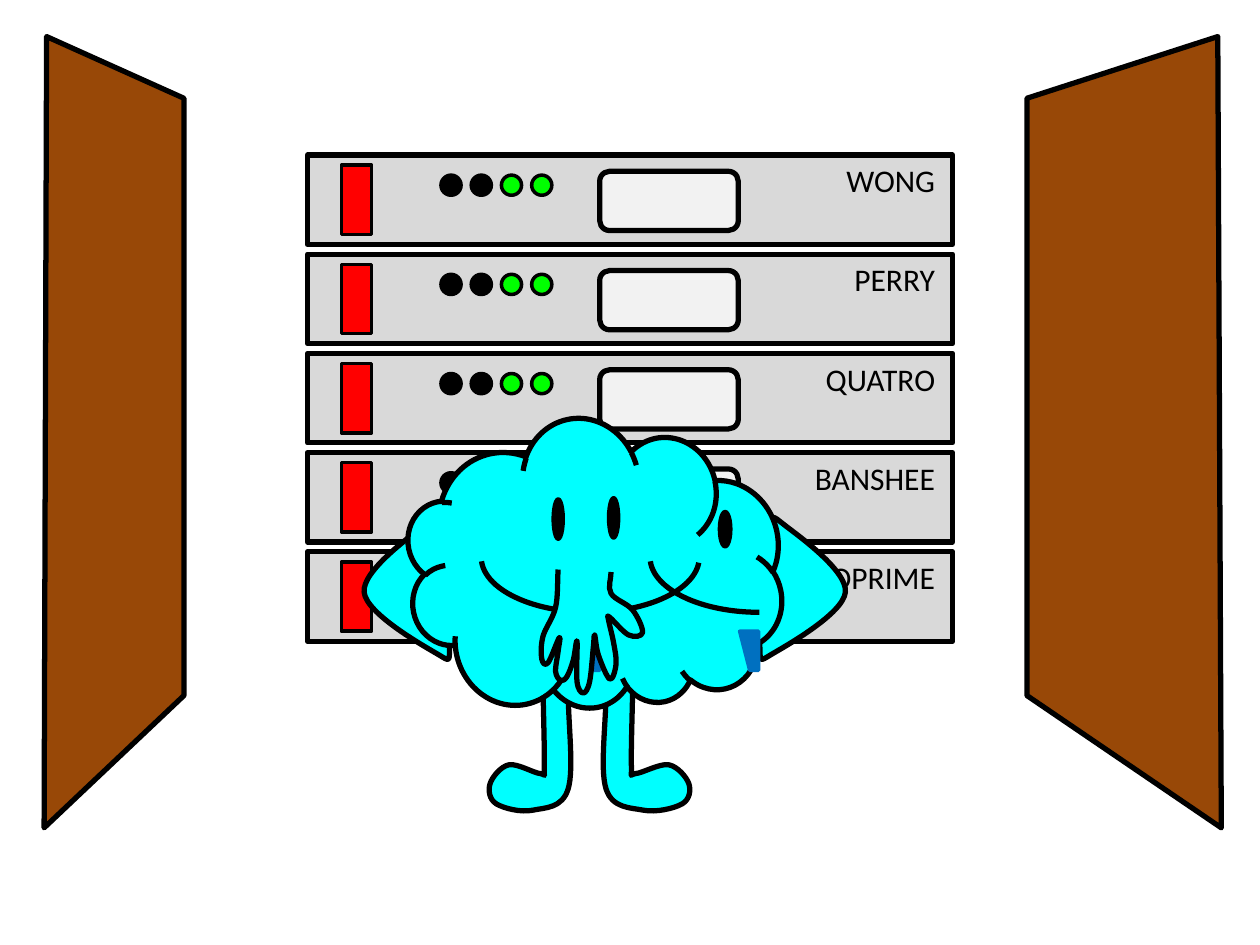
import pptx
import pptx.util
import pptx.dml.color
import pptx.enum.shapes
import pptx.enum.text
import pptx.oxml.ns

HUES = {
    "ink": "000000", "case": "D9D9D9", "red": "FF0000", "green": "00FF00",
    "pane": "F2F2F2", "wood": "984807", "cloud": "00FFFF", "blue": "0070C0",
}
RACKS = [("WONG", 0.91), ("PERRY", 0.85), ("QUATRO", 1.08),
         ("BANSHEE", 1.16), ("METOPRIME", 1.49)]
LIGHTS = ["ink", "ink", "green", "green"]
RACK = {"left": 2.44, "top": 1.23, "wide": 5.12, "high": 0.71}
LAST = 4.38
STEP = (LAST - RACK["top"]) / (len(RACKS) - 1)
GAP = 0.24
LABEL = {"right": 7.52, "high": 0.4}

DOOR = [(1.46, 0.78), (1.46, 5.52), (0.35, 6.57), (0.37, 0.29)]
ARM = [(3.37, 4.17), (2.89, 4.7), (3.47, 5.19), (3.57, 5.1), (3.51, 4.22)]
LEG = {
    "shin": [(4.51, 5.49), (4.51, 6.26)],
    "sole": [(4.23, 6.43), (3.94, 6.38)],
    "toe": [(3.89, 6.22), (4.04, 6.07)],
    "front": [(4.29, 6.14), (4.32, 6.08), (4.31, 5.44)],
}
HAND = {
    "wrist": [(4.85, 4.54), (4.85, 4.71)],
    "thumb": [(5.02, 4.84), (5.1, 5.02), (4.99, 5.04), (4.84, 4.9)],
    "index": [(4.83, 4.92), (4.87, 5.1), (4.89, 5.27), (4.84, 5.39),
              (4.75, 5.2), (4.72, 5.04)],
    "middle": [(4.71, 5.13), (4.68, 5.41), (4.63, 5.5), (4.58, 5.41),
               (4.58, 5.09)],
    "ring": [(4.55, 5.24), (4.5, 5.37), (4.45, 5.4), (4.41, 5.33),
             (4.43, 5.17), (4.44, 5.06)],
    "small": [(4.35, 5.26), (4.3, 5.23), (4.31, 5.05)],
    "palm": [(4.41, 4.82), (4.43, 4.52)],
}
BODY = (3.24, 3.32, 2.95, 2.35)
SMILE = (1.73, 0.87)
TOOTH = {"top": 5.01, "foot": 5.32, "slant": 0.08}
FACES = [
    {"smile": (3.82, 3.99), "ends": (109.2, 214.36),
     "eyes": [(4.83, 3.95, 0.08, 0.32), (4.39, 3.96, 0.08, 0.32)],
     "tooth": (4.53, 4.84), "whole": True},
    {"smile": (5.16, 3.99), "ends": (109.2, 162.23),
     "eyes": [(5.71, 4.06, 0.09, 0.28)],
     "tooth": (5.87, 6.02), "whole": False},
]

KIND = pptx.enum.shapes.MSO_SHAPE
qn = pptx.oxml.ns.qn


def size(inch):
    return pptx.util.Cm(inch * 2.54)


def tint(name):
    return pptx.dml.color.RGBColor.from_string(HUES[name])


def paint(shape, fill, width, edge="ink"):
    shape.shadow.inherit = False
    if fill:
        shape.fill.solid()
        shape.fill.fore_color.rgb = tint(fill)
    else:
        shape.fill.background()
    shape.line.color.rgb = tint(edge)
    shape.line.width = pptx.util.Pt(width)
    return shape


def block(home, kind, box, fill, width=3):
    return paint(home.add_shape(kind, *map(size, box)), fill, width)


def outline(home, dots, fill, width=3, edge="ink", close=True):
    dots = [(size(x), size(y)) for x, y in dots]
    pen = home.build_freeform(*dots[0])
    pen.add_line_segments(dots[1:], close=close)
    return paint(pen.convert_to_shape(), fill, width, edge)


def smooth(knots, close):
    count = len(knots)

    def pull(i, sign):
        prev, after = i - 1, i + 1
        share = 6
        if close:
            prev, after = prev % count, after % count
        elif i in (0, count - 1):
            prev, after = max(prev, 0), min(after, count - 1)
            share = 3
        return tuple(k + sign * (b - a) / share
                     for k, a, b in zip(knots[i], knots[prev], knots[after]))

    dots = [knots[0]]
    for i in range(count if close else count - 1):
        end = (i + 1) % count
        dots += [pull(i, 1), pull(end, -1), knots[end]]
    return dots


def curve(home, knots, close=False):
    shape = outline(home, smooth(knots, close), "cloud", close=close)
    for track in shape.element.iter(qn("a:path")):
        lines = track.findall(qn("a:lnTo"))
        for i in range(0, len(lines), 3):
            bend = track.makeelement(qn("a:cubicBezTo"))
            lines[i].addprevious(bend)
            for line in lines[i:i + 3]:
                bend.append(line[0])
                track.remove(line)


def mirror(dots, old, new, scale=1):
    return [(new + (old - x) * scale, y) for x, y in dots]


def flip(shape):
    shape.element.spPr.find(qn("a:xfrm")).set("flipV", "1")


def rack(home, name, wide, top):
    left = RACK["left"]
    block(home, KIND.RECTANGLE, (left, top, RACK["wide"], RACK["high"]), "case")
    block(home, KIND.RECTANGLE, (left + 0.27, top + 0.08, 0.24, 0.55), "red", 2)
    for i, hue in enumerate(LIGHTS):
        spot = (left + 1.06 + i * GAP, top + 0.16, 0.16, 0.16)
        block(home, KIND.OVAL, spot, hue, 2)
    pane = (left + 2.32, top + 0.13, 1.1, 0.47)
    block(home, KIND.ROUNDED_RECTANGLE, pane, "pane")
    tag(home, name, (LABEL["right"] - wide, top, wide, LABEL["high"]))


def tag(home, name, box):
    frame = home.add_textbox(*map(size, box)).text_frame
    frame.text = name
    frame.word_wrap = False
    frame.auto_size = pptx.enum.text.MSO_AUTO_SIZE.SHAPE_TO_FIT_TEXT
    line = frame.paragraphs[0]
    line.alignment = pptx.enum.text.PP_ALIGN.RIGHT
    font = line.runs[0].font
    font.name, font.size = "Calibri", pptx.util.Pt(18)
    font.color.rgb = tint("ink")


def face(home, part):
    smile = block(home, KIND.ARC, part["smile"] + SMILE, None)
    smile.adjustments[0], smile.adjustments[1] = part["ends"]
    flip(smile)
    for eye in part["eyes"]:
        block(home, KIND.OVAL, eye, "ink", 2)
    left, right = part["tooth"]
    top, foot, slant = TOOTH["top"], TOOTH["foot"], TOOTH["slant"]
    inner = right - slant if part["whole"] else right
    dots = [(left, top), (right, top), (inner, foot), (left + slant, foot)]
    outline(home, dots, "blue", 2, "blue")


def main():
    deck = pptx.Presentation()
    deck.slide_width, deck.slide_height = size(10), size(7.5)
    stage = deck.slides.add_slide(deck.slide_layouts[6]).shapes

    for i, (name, wide) in enumerate(RACKS):
        rack(stage.add_group_shape().shapes, name, wide, RACK["top"] + i * STEP)

    for door in (DOOR, mirror(DOOR, 1.46, 8.15, 1.39)):
        outline(stage, door, "wood")
    for arm in (ARM, mirror(ARM, 3.37, 6.23)):
        curve(stage, arm, close=True)
    leg = sum(LEG.values(), [])
    for side in (leg, mirror(leg, 4.51, 4.81, 1.06)):
        curve(stage, side)

    body = block(stage, KIND.CLOUD, BODY, "cloud")
    flip(body)
    body.rotation = 348.1

    for part in FACES:
        face(stage.add_group_shape().shapes, part)
    curve(stage, sum(HAND.values(), []))
    deck.save("out.pptx")


if __name__ == "__main__":
    main()
